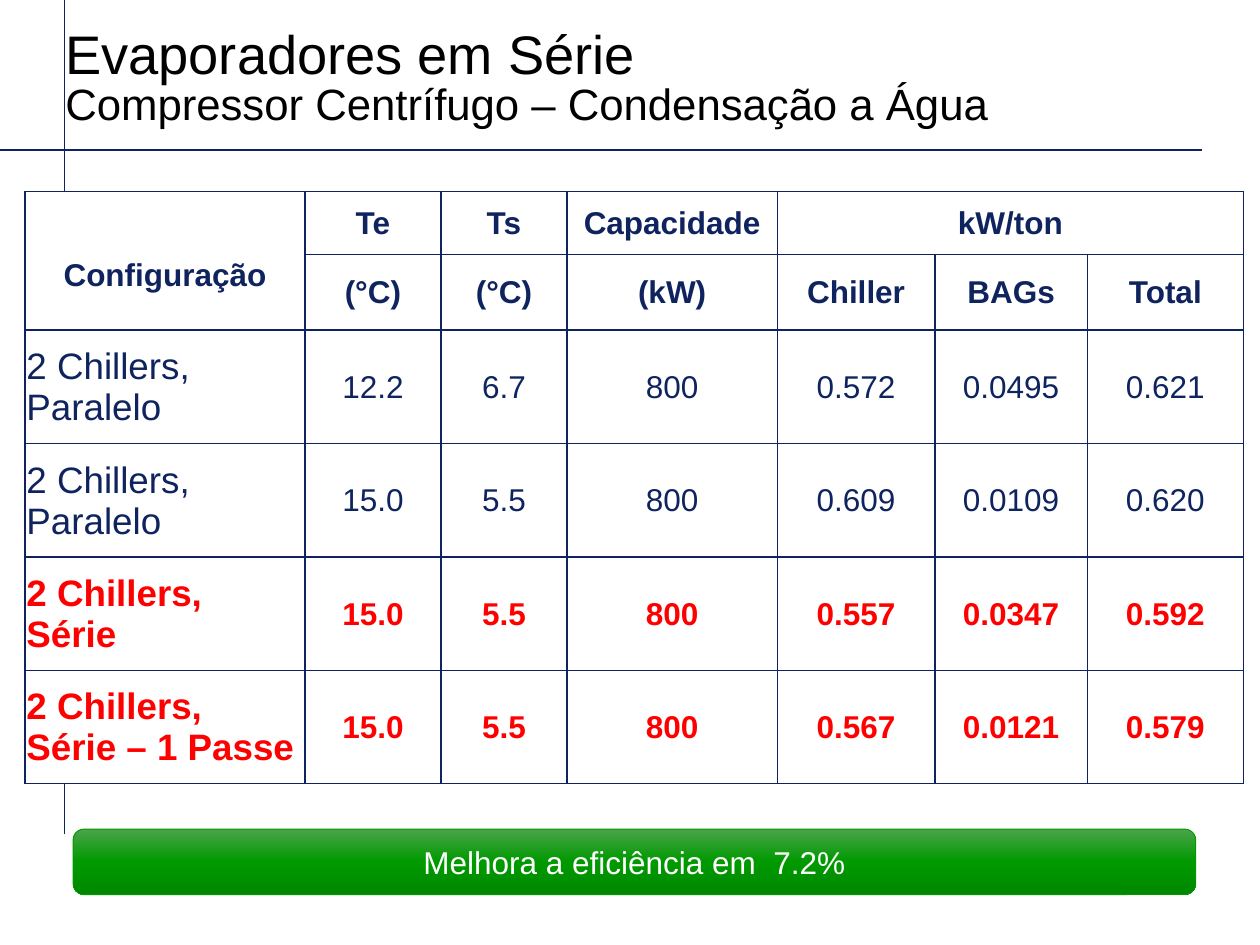
import copy

import pptx
import pptx.dml.color
import pptx.enum.shapes
import pptx.enum.text
import pptx.oxml
import pptx.oxml.ns
import pptx.util
from pptx.util import Inches

NAVY, RED, WHITE, BLACK, GREEN = "0F245F", "FF0000", "FFFFFF", "000000", "009900"
ALIGN = pptx.enum.text.PP_ALIGN
ANCHOR = pptx.enum.text.MSO_ANCHOR

COLUMN_WIDTHS = [2.22, 1.08, 1, 1.67, 1.25, 1.21, 1.24]
ROW_HEIGHTS = [0.5, 0.46, 0.9, 0.9, 0.9, 0.9]
HEADER_ROWS = 2
ROWS = [
    ["Configuração", "Te", "Ts", "Capacidade", "kW/ton", None, None],
    [None, "(°C)", "(°C)", "(kW)", "Chiller", "BAGs", "Total"],
    ["2 Chillers, Paralelo", "12.2", "6.7", "800", "0.572", "0.0495", "0.621"],
    ["2 Chillers, Paralelo", "15.0", "5.5", "800", "0.609", "0.0109", "0.620"],
    ["2 Chillers,\nSérie", "15.0", "5.5", "800", "0.557", "0.0347", "0.592"],
    ["2 Chillers,\nSérie – 1 Passe", "15.0", "5.5", "800", "0.567", "0.0121", "0.579"],
]
FIRST_RED_ROW = 4


def color(value):
    return pptx.dml.color.RGBColor.from_string(value)


def set_attributes(target, values):
    for name, value in values.items():
        setattr(target, name, value)


def format_font(font, size, font_color, bold=False):
    set_attributes(font, {"name": "Arial", "size": pptx.util.Pt(size), "bold": bold})
    font.color.rgb = color(font_color)


def add_rule(slide, start, end):
    rule = slide.shapes.add_connector(
        pptx.enum.shapes.MSO_CONNECTOR.STRAIGHT, *map(Inches, start + end))
    rule.line.color.rgb = color(NAVY)
    rule.line.width = pptx.util.Pt(0.75)
    properties = rule._element.spPr
    properties.append(properties.makeelement(pptx.oxml.ns.qn("a:effectLst"), {}))


def add_title(slide, title, subtitle):
    box = slide.shapes.add_textbox(Inches(0.42), Inches(0.08), Inches(7.75), Inches(1))
    set_attributes(box.text_frame, {"word_wrap": True, "vertical_anchor": ANCHOR.BOTTOM})
    paragraph = box.text_frame.paragraphs[0]
    paragraph.line_spacing = 0.85
    for text, size in ((title, 31), (subtitle, 25)):
        if paragraph.runs:
            paragraph.add_line_break()
        run = paragraph.add_run()
        run.text = text
        format_font(run.font, size, BLACK)


def add_borders(cell):
    properties = cell._tc.get_or_add_tcPr()
    for side in ("L", "R", "T", "B"):
        properties.append(pptx.oxml.parse_xml(
            f'<a:ln{side} {pptx.oxml.ns.nsdecls("a")} w="12700"><a:solidFill>'
            f'<a:srgbClr val="{NAVY}"/></a:solidFill></a:ln{side}>'))


def fill_cell(cell, text, size, font_color, bold, alignment):
    set_attributes(cell, {
        "margin_left": Inches(0.01), "margin_right": Inches(0.01),
        "margin_top": Inches(0.01), "margin_bottom": 0,
        "vertical_anchor": ANCHOR.MIDDLE,
    })
    add_borders(cell)
    cell.fill.solid()
    cell.fill.fore_color.rgb = color(WHITE)
    if text:
        cell.text = text
    for paragraph in cell.text_frame.paragraphs:
        paragraph.alignment = alignment
        format_font(paragraph.font, size, font_color, bold)
        for run in paragraph.runs:
            format_font(run.font, size, font_color, bold)


def add_comparison_table(slide):
    table = slide.shapes.add_table(
        len(ROWS), len(COLUMN_WIDTHS), Inches(0.2), Inches(1.52),
        Inches(sum(COLUMN_WIDTHS)), Inches(sum(ROW_HEIGHTS))).table
    set_attributes(table, {"first_row": False, "horz_banding": False})
    for column, width in zip(table.columns, COLUMN_WIDTHS):
        column.width = Inches(width)
    for row, height in zip(table.rows, ROW_HEIGHTS):
        row.height = Inches(height)

    for row_index, texts in enumerate(ROWS):
        header, red = row_index < HEADER_ROWS, row_index >= FIRST_RED_ROW
        for column_index, text in enumerate(texts):
            label = column_index == 0 and not header
            fill_cell(table.cell(row_index, column_index), text,
                      21 if label else 18, RED if red else NAVY, header or red,
                      ALIGN.LEFT if label else ALIGN.CENTER)

    # Merged headings; the first one sits one line above the bottom
    table.cell(0, 0).merge(table.cell(1, 0))
    table.cell(0, 4).merge(table.cell(0, 6))
    set_attributes(table.cell(0, 0), {
        "vertical_anchor": ANCHOR.BOTTOM, "margin_bottom": Inches(0.29)})


def apply_gradient(shape, stops):
    shape.fill.gradient()
    shape.fill.gradient_angle = 270
    stop_list = shape._element.spPr.find(".//" + pptx.oxml.ns.qn("a:gsLst"))
    while len(stop_list) < len(stops):
        stop_list.append(copy.deepcopy(stop_list[-1]))
    for stop, (position, value) in zip(shape.fill.gradient_stops, stops):
        stop.position = position
        stop.color.rgb = color(value)


def add_conclusion(slide, text):
    shape = slide.shapes.add_shape(
        pptx.enum.shapes.MSO_SHAPE.ROUNDED_RECTANGLE,
        Inches(0.58), Inches(6.58), Inches(8.91), Inches(0.52))
    shape.shadow.inherit = False
    apply_gradient(shape, [(0, "4BA44B"), (0.5, GREEN), (1, "008800")])
    shape.line.color.rgb = color(GREEN)
    shape.line.width = pptx.util.Pt(0.5)
    set_attributes(shape.text_frame, {"word_wrap": True, "vertical_anchor": ANCHOR.MIDDLE})
    paragraph = shape.text_frame.paragraphs[0]
    paragraph.alignment = ALIGN.CENTER
    run = paragraph.add_run()
    run.text = text
    format_font(run.font, 18, WHITE)


def main():
    presentation = pptx.Presentation()
    set_attributes(presentation, {"slide_width": Inches(10), "slide_height": Inches(7.5)})
    slide = presentation.slides.add_slide(presentation.slide_layouts[6])

    # Crossing rules behind the content
    add_rule(slide, (0.51, 6.62), (0.51, 0))
    add_rule(slide, (0, 1.19), (9.54, 1.19))

    # Title, table and conclusion
    add_title(slide, "Evaporadores em Série", "Compressor Centrífugo – Condensação a Água")
    add_comparison_table(slide)
    add_conclusion(slide, "Melhora a eficiência em  7.2%")

    presentation.save("out.pptx")


if __name__ == "__main__":
    main()
